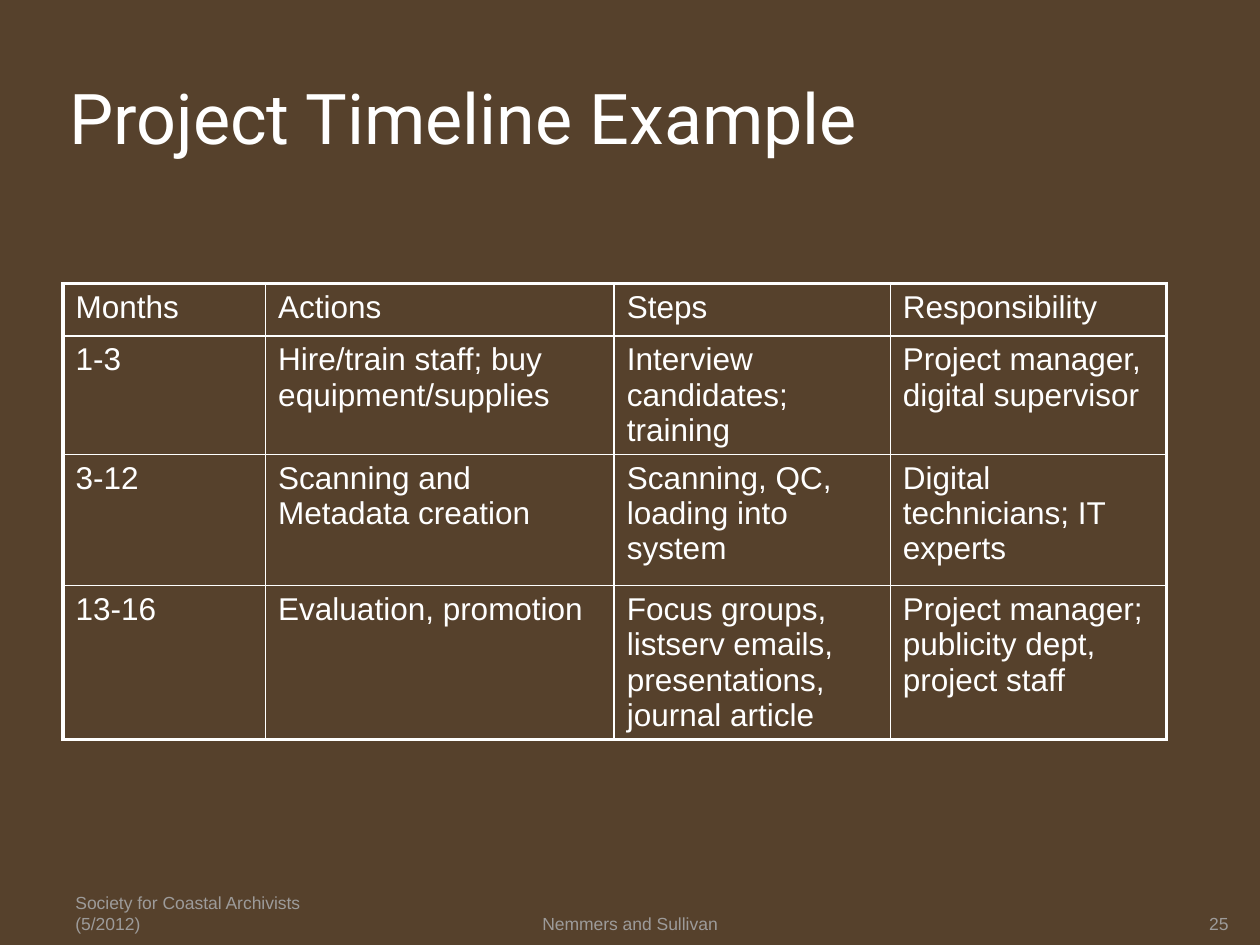
from dataclasses import dataclass

from lxml.etree import SubElement
from pptx import Presentation
from pptx.dml.color import RGBColor
from pptx.enum.text import MSO_ANCHOR, MSO_AUTO_SIZE, PP_ALIGN
from pptx.oxml.ns import qn
from pptx.util import Inches, Pt

BROWN = RGBColor(0x56, 0x41, 0x2C)
WHITE = RGBColor(0xFF, 0xFF, 0xFF)
GREY = RGBColor(0x9D, 0x9B, 0x9A)

UNIT = 1 / 12
OUTER_LINE, INNER_LINE = 2.25, 1
COLUMN_WIDTHS = (19.3, 33.2, 26.3, 26.3)
ROW_HEIGHTS = (5, 9.5, 12.5, 11.3)
TIMELINE = (
    ("Months", "Actions", "Steps", "Responsibility"),
    ("1-3", "Hire/train staff; buy equipment/supplies",
     "Interview candidates; training", "Project manager, digital supervisor"),
    ("3-12", "Scanning and Metadata creation",
     "Scanning, QC, loading into system", "Digital technicians; IT experts"),
    ("13-16", "Evaluation, promotion",
     "Focus groups, listserv emails, presentations, journal article",
     "Project manager; publicity dept, project staff"),
)


@dataclass(frozen=True)
class Area:
    column: float
    row: float
    columns: float
    rows: float

    def lengths(self):
        return [grid(n) for n in (self.column, self.row, self.columns, self.rows)]


@dataclass(frozen=True)
class FooterItem:
    text: str
    area: Area
    align: PP_ALIGN
    side_inset: float
    top_inset: float


FOOTER = (
    FooterItem("Society for Coastal Archivists (5/2012)", Area(6, 84.2, 28, 4.8),
               PP_ALIGN.LEFT, 0.1, 0.05),
    FooterItem("Nemmers and Sullivan", Area(41, 84.2, 38, 4.8),
               PP_ALIGN.CENTER, 0, 0.05),
    FooterItem("25", Area(107, 84.2, 10, 4.8), PP_ALIGN.RIGHT, 0, 0),
)


def grid(units: float) -> int:
    return Inches(units * UNIT)


def set_frame(frame, anchor: MSO_ANCHOR, side: float, top: float, bottom: float) -> None:
    frame.word_wrap = True
    frame.auto_size = MSO_AUTO_SIZE.NONE
    frame.vertical_anchor = anchor
    frame.margin_left = frame.margin_right = Inches(side)
    frame.margin_top, frame.margin_bottom = Inches(top), Inches(bottom)


def write(frame, text: str, size: float, color: RGBColor,
          font: str = "Arial", align: PP_ALIGN = PP_ALIGN.LEFT) -> None:
    para = frame.paragraphs[0]
    para.alignment = align
    span = para.add_run()
    span.text = text
    span.font.name = font
    span.font.size = Pt(size)
    span.font.color.rgb = color


def add_border(cell, side: str, width: float) -> None:
    properties = cell._tc.get_or_add_tcPr()
    line = SubElement(properties, qn(f"a:ln{side}"), w=str(Pt(width)))
    fill = SubElement(line, qn("a:solidFill"))
    SubElement(fill, qn("a:srgbClr"), val=str(WHITE))


def draw_title(page, text: str) -> None:
    title = page.shapes.title
    title.left, title.top, title.width, title.height = Area(6, 3.6, 98, 15).lengths()
    set_frame(title.text_frame, MSO_ANCHOR.MIDDLE, 0.05, 0.05, 0.05)
    write(title.text_frame, text, 40, WHITE, "Roboto")


def draw_timeline(page) -> None:
    area = Area(6, 27, sum(COLUMN_WIDTHS), sum(ROW_HEIGHTS))
    last_row, last_column = len(ROW_HEIGHTS) - 1, len(COLUMN_WIDTHS) - 1
    table = page.shapes.add_table(last_row + 1, last_column + 1, *area.lengths()).table
    table.first_row = table.horz_banding = False
    for column, width in zip(table.columns, COLUMN_WIDTHS):
        column.width = grid(width)
    for row, height in zip(table.rows, ROW_HEIGHTS):
        row.height = grid(height)
    for r, texts in enumerate(TIMELINE):
        for c, text in enumerate(texts):
            cell = table.cell(r, c)
            write(cell.text_frame, text, 18, WHITE)
            outer_sides = {"L": c == 0, "R": c == last_column,
                           "T": r == 0, "B": r == last_row}
            for side, outer in outer_sides.items():
                add_border(cell, side, OUTER_LINE if outer else INNER_LINE)
            cell.fill.background()


def draw_footer_item(page, item: FooterItem) -> None:
    box = page.shapes.add_textbox(*item.area.lengths())
    set_frame(box.text_frame, MSO_ANCHOR.BOTTOM, item.side_inset, item.top_inset, 0)
    write(box.text_frame, item.text, 10, GREY, align=item.align)


def main() -> None:
    deck = Presentation()
    deck.slide_width, deck.slide_height = grid(120), grid(90)
    page = deck.slides.add_slide(deck.slide_layouts.get_by_name("Title Only"))
    page.background.fill.solid()
    page.background.fill.fore_color.rgb = BROWN
    draw_title(page, "Project Timeline Example")
    draw_timeline(page)
    for item in FOOTER:
        draw_footer_item(page, item)
    deck.save("out.pptx")


if __name__ == "__main__":
    main()
